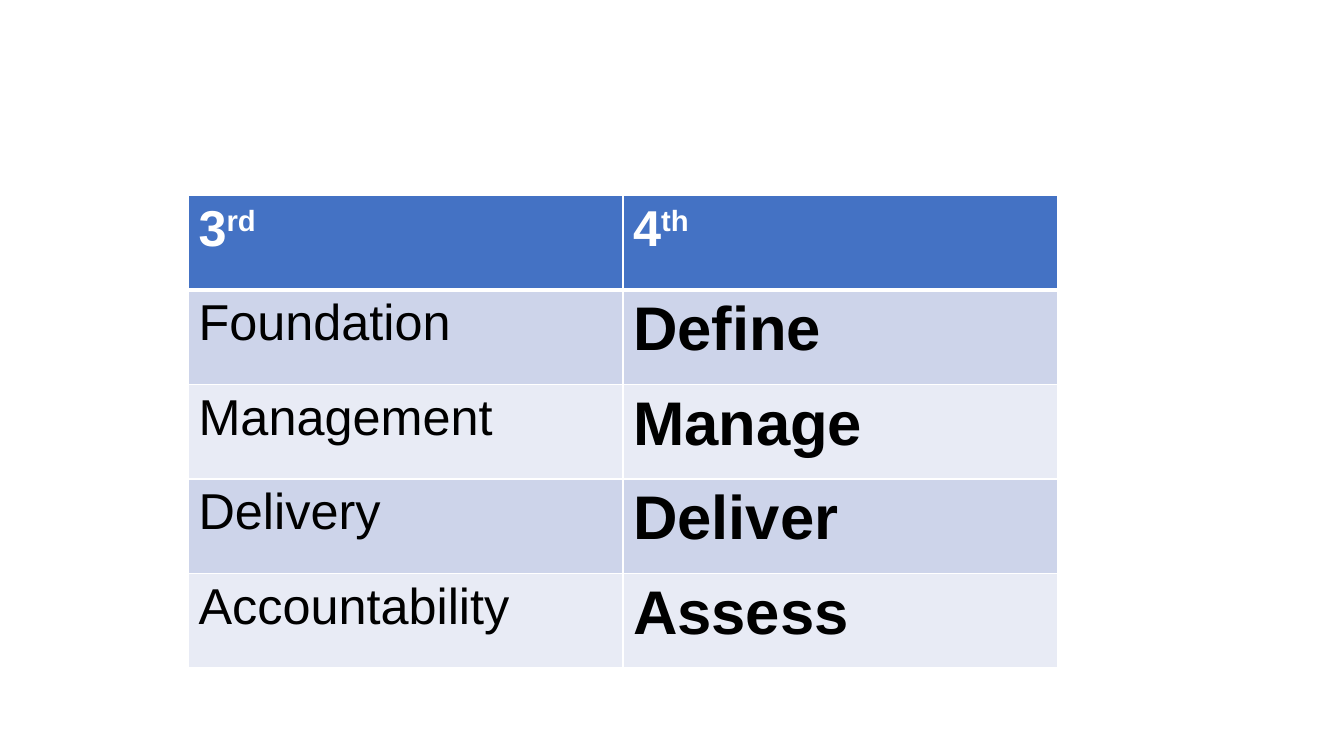
import pptx
import pptx.dml.color
import pptx.oxml
import pptx.oxml.ns
import pptx.util
from pptx.dml.color import RGBColor
from pptx.util import Cm

WHITE = RGBColor(0xFF, 0xFF, 0xFF)
BLACK = RGBColor(0x00, 0x00, 0x00)
HEADER_BLUE = RGBColor(0x44, 0x72, 0xC4)
BANDS = (RGBColor(0xCD, 0xD4, 0xEA), RGBColor(0xE8, 0xEB, 0xF5))

EDITIONS = (("3", "rd"), ("4", "th"))
STAGES = (
    ("Foundation", "Define"),
    ("Management", "Manage"),
    ("Delivery", "Deliver"),
    ("Accountability", "Assess"),
)


def set_borders(cell, bottom_points):
    """Draw white lines on all four sides of a cell."""
    properties = cell._tc.get_or_add_tcPr()
    for side, points in (("L", 1), ("R", 1), ("T", 1), ("B", bottom_points)):
        properties.append(pptx.oxml.parse_xml(
            f'<a:ln{side} {pptx.oxml.ns.nsdecls("a")} w="{pptx.util.Pt(points)}">'
            f'<a:solidFill><a:srgbClr val="{WHITE}"/></a:solidFill></a:ln{side}>'))


def style_cell(cell, fill, color, size, bold, bottom_points=1):
    set_borders(cell, bottom_points)
    cell.fill.solid()
    cell.fill.fore_color.rgb = fill
    for span in cell.text_frame.paragraphs[0].runs:
        span.font.name = "Arial"
        span.font.size = pptx.util.Pt(size)
        span.font.bold = bold
        span.font.color.rgb = color


def add_edition_table(page, left, top, width, height):
    """Compare the stage names of the two editions."""
    frame = page.shapes.add_table(
        len(STAGES) + 1, len(EDITIONS), left, top, width, height)
    table = frame.table

    # Header: edition number with a raised ordinal ending
    for column, (number, ending) in enumerate(EDITIONS):
        cell = table.cell(0, column)
        para = cell.text_frame.paragraphs[0]
        para.text = number
        ordinal = para.add_run()
        ordinal.text = ending
        ordinal._r.get_or_add_rPr().set("baseline", "30000")
        style_cell(cell, HEADER_BLUE, WHITE, 36, True, bottom_points=3)

    # Body: the newer edition stands out in larger bold text
    for row, names in enumerate(STAGES, start=1):
        fill = BANDS[(row - 1) % 2]
        for column, name in enumerate(names):
            cell = table.cell(row, column)
            cell.text_frame.text = name
            newer = column == 1
            style_cell(cell, fill, BLACK, 44 if newer else 36, newer)


def main():
    deck = pptx.Presentation()
    deck.slide_width, deck.slide_height = Cm(33.87), Cm(19.05)
    page = deck.slides.add_slide(deck.slide_layouts[6])
    add_edition_table(page, Cm(4.75), Cm(4.93), Cm(21.9), Cm(11.9))
    deck.save("out.pptx")


if __name__ == "__main__":
    main()
